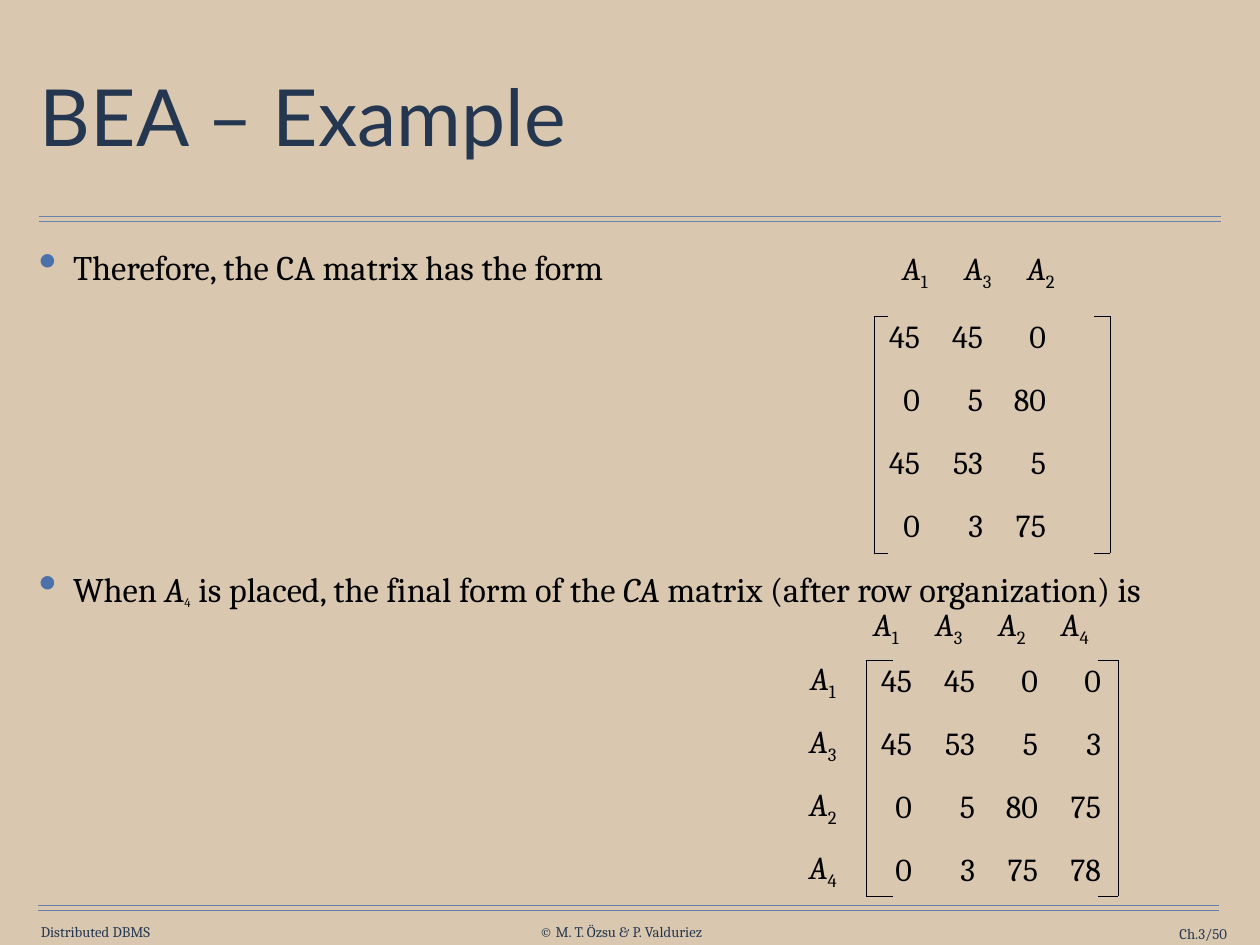
from lxml import etree
from pptx import Presentation
from pptx.dml.color import RGBColor
from pptx.enum.shapes import MSO_CONNECTOR
from pptx.enum.text import MSO_ANCHOR as ANCHOR, PP_ALIGN as ALIGN
from pptx.oxml.ns import qn
from pptx.util import Pt

PX = 10321  # EMU per px
SLIDE_W, SLIDE_H = 1260, 945

SAND = RGBColor(0xD9, 0xC8, 0xAF)
NAVY = RGBColor(0x25, 0x37, 0x50)
RULE_BLUE = RGBColor(0x66, 0x82, 0xAA)
BULLET_BLUE = RGBColor(0x4A, 0x71, 0xA9)
BLACK = RGBColor(0, 0, 0)

SERIF, SANS = "Cambria", "Lato"
BODY_FORMAT = {"name": SERIF, "size": Pt(28)}
ENTRY_FORMAT = {"name": SERIF, "size": Pt(26)}
FOOTER_FORMAT = {"name": SERIF, "size": Pt(12)}
TITLE_FORMAT = {"name": SANS, "size": Pt(64)}

PITCH = 63  # distance between matrix rows and columns
ENTRY_W, ENTRY_H = 58, 51
LABEL_W = 62


def add_line(slide, x1, y1, x2, y2, color):
    ends = [v * PX for v in (x1, y1, x2, y2)]
    line = slide.shapes.add_connector(MSO_CONNECTOR.STRAIGHT, *ends)
    line.line.color.rgb = color
    line.line.width = Pt(0.75)
    etree.SubElement(line._element.spPr, qn("a:effectLst"))


def add_frame(slide, box, inset=(0, 0), anchor=ANCHOR.TOP):
    frame = slide.shapes.add_textbox(*(v * PX for v in box)).text_frame
    frame.word_wrap = True
    frame.vertical_anchor = anchor
    frame.margin_left = frame.margin_right = inset[0] * PX
    frame.margin_top = frame.margin_bottom = inset[1] * PX
    return frame


def add_run(paragraph, text, text_format, color=BLACK, subscript=False):
    run = paragraph.add_run()
    run.text = text
    for key, value in text_format.items():
        setattr(run.font, key, value)
    run.font.color.rgb = color
    if subscript:
        run._r.get_or_add_rPr().set("baseline", "-25000")


def add_bullet(paragraph):
    props = paragraph._p.get_or_add_pPr()
    props.set("marL", str(34 * PX))
    props.set("indent", str(-34 * PX))
    color = etree.SubElement(props, qn("a:buClr"))
    etree.SubElement(color, qn("a:srgbClr"), val=str(BULLET_BLUE))
    etree.SubElement(props, qn("a:buSzPct"), val="150000")
    etree.SubElement(props, qn("a:buChar"), char="•")


def add_double_rule(slide, left, top, width):
    for y in (top, top + 5):
        add_line(slide, left, y, left + width, y, RULE_BLUE)


def add_title(slide, box):
    paragraph = add_frame(slide, box, (5, 5), ANCHOR.MIDDLE).paragraphs[0]
    paragraph.line_spacing = 0.9
    add_run(paragraph, "BEA – Example", TITLE_FORMAT, NAVY)


def add_body(slide, box):
    frame = add_frame(slide, box, (5, 5))
    first, second = frame.paragraphs[0], frame.add_paragraph()
    second.space_before = Pt(228)  # leaves room for the first matrix
    for paragraph in (first, second):
        add_bullet(paragraph)
    italic = BODY_FORMAT | {"italic": True}
    add_run(first, "Therefore, the CA matrix has the form", BODY_FORMAT)
    add_run(second, "When ", BODY_FORMAT)
    add_run(second, "A", italic)
    add_run(second, "4", BODY_FORMAT | {"size": Pt(18)}, subscript=True)
    add_run(second, " is placed, the final form of the ", BODY_FORMAT)
    add_run(second, "CA", italic)
    add_run(second, " matrix (after row organization) is", BODY_FORMAT)


def add_label(slide, center, top, index):
    box = (center - LABEL_W // 2, top, LABEL_W, ENTRY_H)
    paragraph = add_frame(slide, box, (10, 6)).paragraphs[0]
    paragraph.alignment = ALIGN.CENTER
    add_run(paragraph, "A", ENTRY_FORMAT | {"italic": True})
    add_run(paragraph, index, ENTRY_FORMAT, subscript=True)


def add_matrix(slide, box, rows, attributes, header_offset, ticks, row_labels=False):
    """Box is the outline of the brackets; header_offset leads to the first label."""
    left, top, width, height = box
    right, bottom = left + width, top + height

    # Brackets
    for x, tick_end in ((left, left + ticks[0]), (right, right - ticks[1])):
        add_line(slide, x, top, x, bottom, BLACK)
        for y in (top, bottom):
            add_line(slide, x, y, tick_end, y, BLACK)

    # Attribute labels
    for i, index in enumerate(attributes):
        add_label(slide, left + header_offset[0] + i * PITCH, top + header_offset[1], index)
        if row_labels:
            add_label(slide, left - 43, top - 7 + i * PITCH, index)

    # Entries, aligned on the right of each column
    for r, row in enumerate(rows):
        for c, value in enumerate(row):
            entry_box = (left - 3 + c * PITCH, top - 5 + r * PITCH, ENTRY_W, ENTRY_H)
            paragraph = add_frame(slide, entry_box, (9, 6)).paragraphs[0]
            paragraph.alignment = ALIGN.RIGHT
            add_run(paragraph, str(value), ENTRY_FORMAT)


def add_footer(slide, box):
    left, top, width, height = box
    notes = (("Distributed DBMS", 0, 0, 140, ALIGN.LEFT),
             ("© M. T. Özsu & P. Valduriez", 488, 0, 184, ALIGN.CENTER),
             ("Ch.3/50", width - 136, 2, 136, ALIGN.RIGHT))
    for text, x, y, note_w, alignment in notes:
        note_box = (left + x, top + y, note_w, height)
        paragraph = add_frame(slide, note_box, anchor=ANCHOR.MIDDLE).paragraphs[0]
        paragraph.alignment = alignment
        add_run(paragraph, text, FOOTER_FORMAT, NAVY)


def main():
    deck = Presentation()
    deck.slide_width, deck.slide_height = SLIDE_W * PX, SLIDE_H * PX
    slide = deck.slides.add_slide(deck.slide_layouts[6])
    slide.background.fill.solid()
    slide.background.fill.fore_color.rgb = SAND

    add_double_rule(slide, 39, 216, 1182)
    add_double_rule(slide, 38, 905, 1181)
    add_footer(slide, (41, 923, 1186, 18))
    add_title(slide, (35, 43, 1191, 156))
    add_body(slide, (34, 241, 1191, 656))

    # CA matrix with three attributes
    add_matrix(slide, (874, 316, 236, 237),
               [(45, 45, 0), (0, 5, 80), (45, 53, 5), (0, 3, 75)],
               "132", (41, -73), (14, 16))
    # Final CA matrix after row organization
    add_matrix(slide, (866, 660, 252, 236),
               [(45, 45, 0, 0), (45, 53, 5, 3), (0, 5, 80, 75), (0, 3, 75, 78)],
               "1324", (20, -61), (27, 20), row_labels=True)

    deck.save("out.pptx")


if __name__ == "__main__":
    main()
